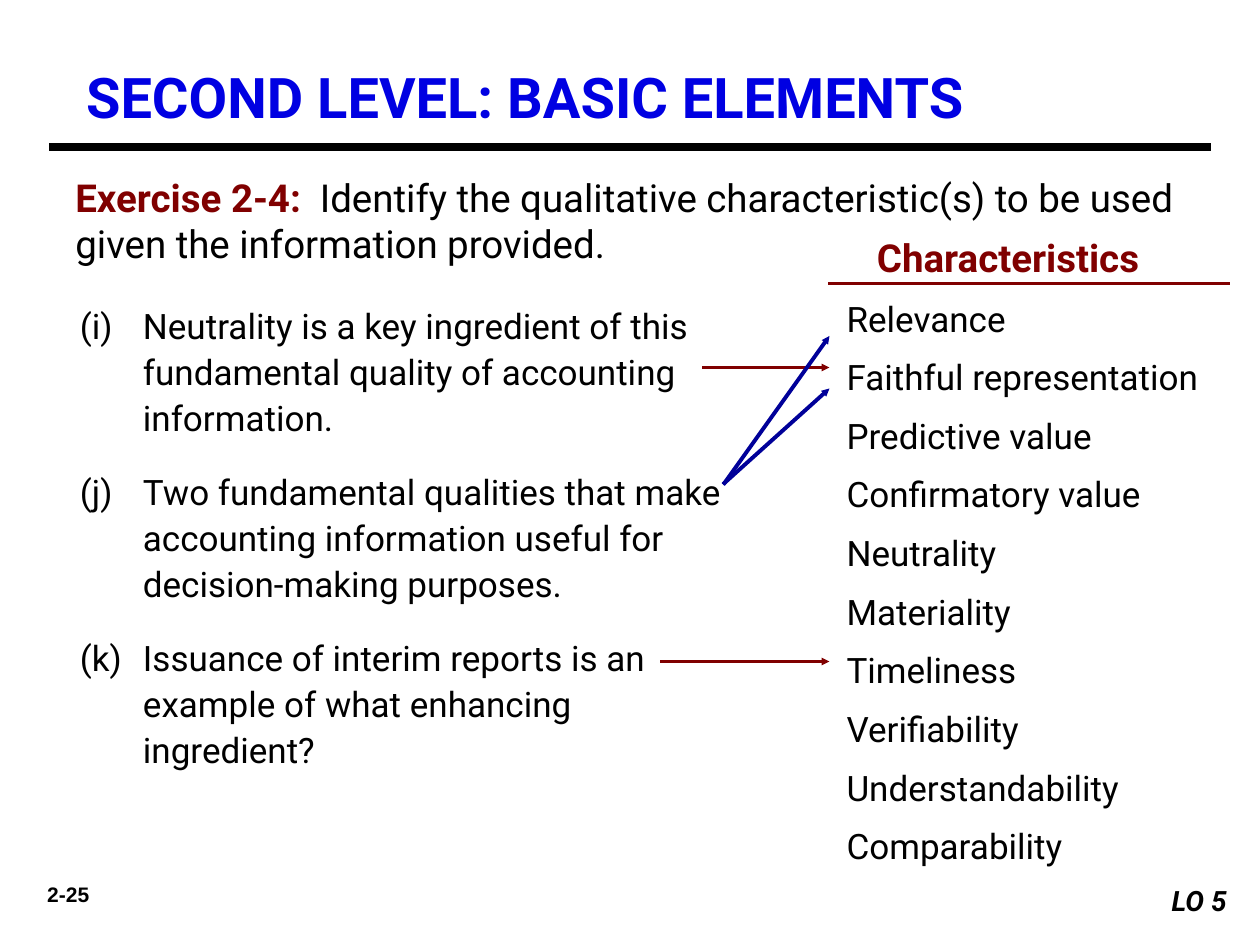
import pptx
import pptx.util
import pptx.dml.color
import pptx.enum.shapes
import pptx.enum.text
import pptx.oxml.ns
import lxml.etree

Pt = pptx.util.Pt
RGB = pptx.dml.color.RGBColor
ALIGN = pptx.enum.text.PP_ALIGN
ANCHOR = pptx.enum.text.MSO_ANCHOR
qn = pptx.oxml.ns.qn

BLACK = RGB(0x00, 0x00, 0x00)
WHITE = RGB(0xFF, 0xFF, 0xFF)
MAROON = RGB(0x80, 0x00, 0x00)
NAVY = RGB(0x00, 0x00, 0x99)
BLUE = RGB(0x00, 0x00, 0xE2)

COLS, ROWS = 120, 90

TASKS = [
    "Neutrality is a key ingredient of this fundamental quality of accounting information.",
    "Two fundamental qualities that make accounting information useful for decision-making purposes.",
    "Issuance of interim reports is an example of what enhancing ingredient?",
]
TRAITS = [
    "Relevance", "Faithful representation", "Predictive value", "Confirmatory value",
    "Neutrality", "Materiality", "Timeliness", "Verifiability",
    "Understandability", "Comparability",
]
ARROWS = [
    (67, 35, 79, 35, MAROON),
    (69, 46, 79, 32, NAVY),
    (63, 63, 79, 63, MAROON),
    (69, 46, 79, 37, NAVY),
]


class Deck:
    face = "Roboto"

    def __init__(self):
        self.prs = pptx.Presentation()
        self.prs.slide_width = pptx.util.Inches(10)
        self.prs.slide_height = pptx.util.Inches(7.5)
        self.slide = self.prs.slides.add_slide(self.prs.slide_layouts[5])

    def grid(self, x, y):
        return (round(self.prs.slide_width * x / COLS),
                round(self.prs.slide_height * y / ROWS))

    def style(self, font, size, color=BLACK, bold=False, face=None):
        font.name = face or self.face
        font.size = Pt(size)
        font.color.rgb = color
        font.bold = bold

    def title(self, text, x, y, w, h):
        box = self.slide.shapes.title
        box.left, box.top = self.grid(x, y)
        box.width, box.height = self.grid(w, h)
        frame = box.text_frame
        frame.text = text
        frame.auto_size = pptx.enum.text.MSO_AUTO_SIZE.NONE
        frame.vertical_anchor = ANCHOR.TOP
        frame.margin_top = pptx.util.Inches(0.08)
        par = frame.paragraphs[0]
        par.alignment = ALIGN.LEFT
        self.style(par.font, 32, BLUE, True)

    def text(self, text, x, y, w, h, size, color=BLACK, bold=False,
             face=None, align=ALIGN.LEFT, anchor=ANCHOR.TOP):
        box = self.slide.shapes.add_textbox(*self.grid(x, y), *self.grid(w, h))
        frame = box.text_frame
        frame.word_wrap = True
        frame.vertical_anchor = anchor
        par = frame.paragraphs[0]
        par.alignment = align
        if text:
            par.text = text
            self.style(par.font, size, color, bold, face)
        return frame

    def mixed(self, parts, x, y, w, h, size):
        par = self.text("", x, y, w, h, size).paragraphs[0]
        for text, color, bold in parts:
            run = par.add_run()
            run.text = text
            self.style(run.font, size, color, bold)

    def items(self, texts, x, y, w, h, size, space, before, first=None):
        frame = self.text("", x, y, w, h, size)
        for i, text in enumerate(texts):
            par = frame.add_paragraph() if i else frame.paragraphs[0]
            par.text = text
            par.line_spacing = space
            par.space_before = Pt(before)
            par.space_after = Pt(4.7)
            self.style(par.font, size)
            props = par._p.get_or_add_pPr()
            props.set("marL", str(pptx.util.Inches(0.62 if first else 0.12)))
            if first:
                props.set("indent", str(pptx.util.Inches(-0.5)))
                mark = lxml.etree.Element(qn("a:buAutoNum"), type="alphaLcParenBoth",
                                          startAt=str(first))
                props.insert_element_before(mark, "a:tabLst", "a:defRPr", "a:extLst")

    def line(self, x1, y1, x2, y2, color, width=2.25, head=False):
        link = self.slide.shapes.add_connector(
            pptx.enum.shapes.MSO_CONNECTOR.STRAIGHT, *self.grid(x1, y1), *self.grid(x2, y2))
        link.line.color.rgb = color
        link.line.width = Pt(width)
        props = link._element.spPr
        stroke = props.find(qn("a:ln"))
        stroke.set("cap", "sq")
        if head:
            lxml.etree.SubElement(stroke, qn("a:tailEnd"), type="triangle", w="sm", len="sm")
        lxml.etree.SubElement(props, qn("a:effectLst"))

    def tag(self, text, x, y, w, h, size):
        box = self.slide.shapes.add_shape(
            pptx.enum.shapes.MSO_SHAPE.RECTANGLE, *self.grid(x, y), *self.grid(w, h))
        box.shadow.inherit = False
        box.fill.solid()
        box.fill.fore_color.rgb = WHITE
        box.line.fill.background()
        frame = box.text_frame
        frame.text = text
        frame.vertical_anchor = ANCHOR.TOP
        par = frame.paragraphs[0]
        par.alignment = ALIGN.RIGHT
        self.style(par.font, size, BLACK, True)
        par.font.italic = True


def main():
    deck = Deck()
    deck.title("SECOND LEVEL: BASIC ELEMENTS", 7, 5, 108, 7.3)
    deck.line(5, 14, 115, 14, BLACK, 4.5)
    deck.mixed([
        ("Exercise 2-4:", MAROON, True),
        ("  Identify the qualitative characteristic(s) to be used "
         "given the information provided.", BLACK, False),
    ], 6, 16, 112, 10, 22)
    deck.items(TASKS, 5, 28, 67, 46.5, 20, 1.1, 11, first=9)
    deck.text("Characteristics", 79, 22, 34, 5, 22, MAROON, True,
              align=ALIGN.CENTER, anchor=ANCHOR.MIDDLE)
    deck.line(79, 27, 117, 27, MAROON)
    deck.items(TRAITS, 78, 26.9, 39, 57, 20, 1.2, 0)
    for x1, y1, x2, y2, color in ARROWS:
        deck.line(x1, y1, x2, y2, color, head=True)
    deck.text("2-25", 1, 83.4, 11, 3.6, 12, bold=True, face="Arial", align=ALIGN.CENTER)
    deck.tag("LO 5", 103, 83.6, 15, 4.4, 16)
    deck.prs.save("out.pptx")


if __name__ == "__main__":
    main()
